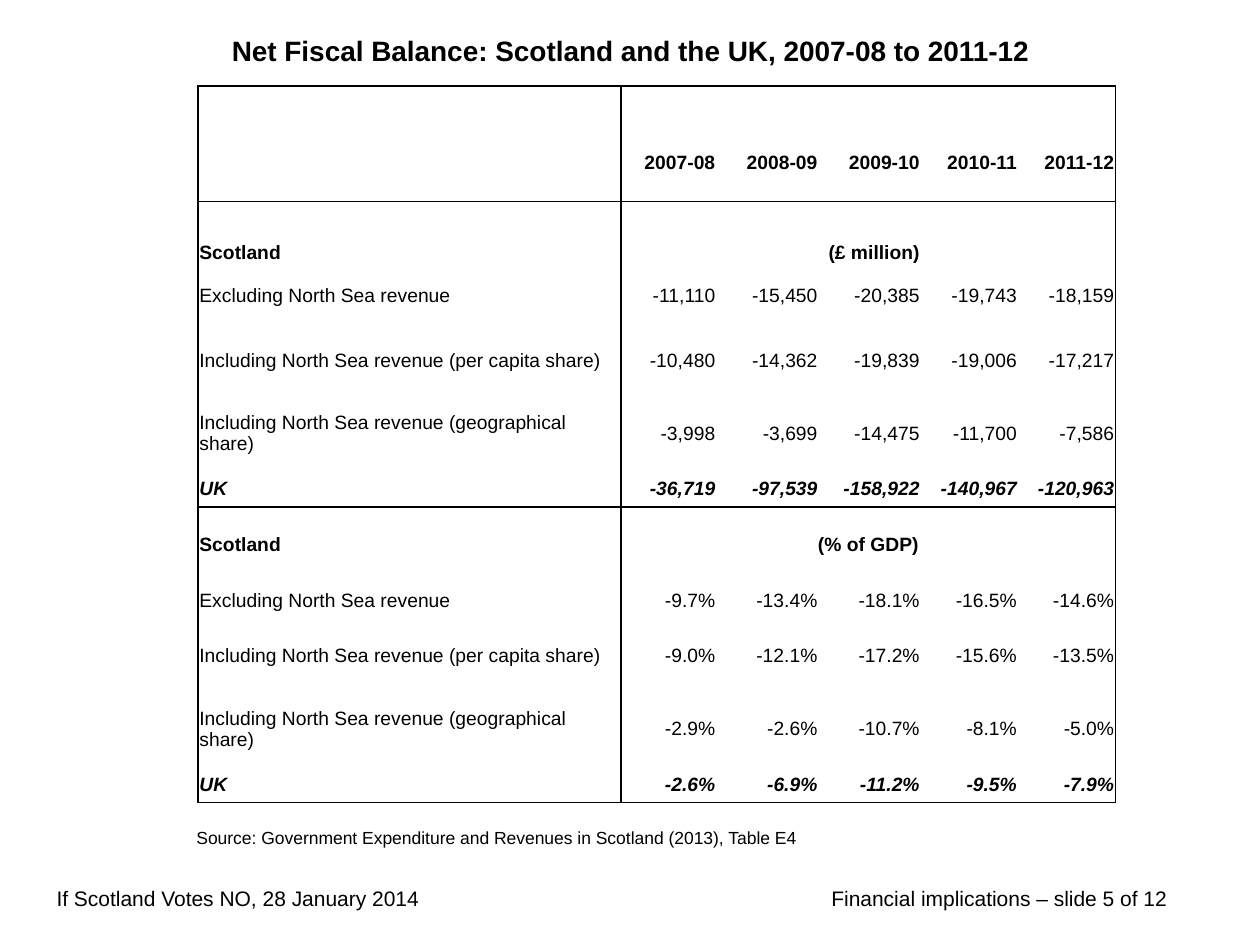
from dataclasses import dataclass

from lxml.etree import SubElement
from pptx import Presentation
from pptx.dml.color import RGBColor
from pptx.enum.text import MSO_ANCHOR, PP_ALIGN
from pptx.oxml.ns import qn
from pptx.util import Cm, Pt


@dataclass(frozen=True)
class Theme:
    font: str = "Arial"
    ink: str = "000000"
    title: int = 16
    footer: int = 12
    table: int = 11
    source: int = 10
    border: int = 1
    cell_inset: float = 0.03


class FiscalPage:
    def __init__(self, deck, theme):
        self.theme = theme
        self.page = deck.slides.add_slide(deck.slide_layouts[6])

    def style(self, para, size, bold=False, italic=False, align=PP_ALIGN.LEFT):
        para.alignment = align
        font = para.font
        font.name, font.size = self.theme.font, Pt(size)
        font.bold, font.italic = bold, italic
        font.color.rgb = RGBColor.from_string(self.theme.ink)

    def text(self, words, left, top, width, height, size, **look):
        box = self.page.shapes.add_textbox(Cm(left), Cm(top), Cm(width), Cm(height))
        box.text_frame.word_wrap = True
        para = box.text_frame.paragraphs[0]
        para.text = words
        self.style(para, size, **look)
        return box.text_frame

    def table(self, left, top, widths, heights):
        frame = self.page.shapes.add_table(
            len(heights), len(widths), Cm(left), Cm(top), Cm(sum(widths)), Cm(sum(heights)))
        table = frame.table
        table.first_row = table.horz_banding = False
        for column, width in zip(table.columns, widths):
            column.width = Cm(width)
        for row, height in zip(table.rows, heights):
            row.height = Cm(height)
        return table

    def cell(self, cell, words="", **look):
        inset = Cm(self.theme.cell_inset)
        cell.margin_left = cell.margin_right = cell.margin_top = inset
        cell.margin_bottom = 0
        cell.vertical_anchor = MSO_ANCHOR.MIDDLE
        para = cell.text_frame.paragraphs[0]
        para.text = words
        self.style(para, self.theme.table, **look)

    def heading_above(self, cell, heading):
        value = cell.text_frame.paragraphs[0]
        words, align = value.text, value.alignment
        value.text = heading
        self.style(value, self.theme.table, bold=True, align=align)
        para = cell.text_frame.add_paragraph()
        para.text = words
        para.space_before = Pt(12.5)
        self.style(para, self.theme.table, align=align)

    def rules(self, table, row_edges, column_edges):
        for row in range(len(table.rows)):
            for column in range(len(table.columns)):
                cell = table.cell(row, column)
                bottom = row + cell.span_height if cell.is_merge_origin else row + 1
                right = column + cell.span_width if cell.is_merge_origin else column + 1
                edges = {
                    "a:lnL": column in column_edges,
                    "a:lnR": right in column_edges,
                    "a:lnT": row in row_edges,
                    "a:lnB": bottom in row_edges,
                }
                properties = cell._tc.get_or_add_tcPr()
                for tag, visible in edges.items():
                    self.edge(properties, tag, visible)
                cell.fill.background()

    def edge(self, properties, tag, visible):
        line = SubElement(properties, qn(tag), w=str(Pt(self.theme.border)))
        if visible:
            fill = SubElement(line, qn("a:solidFill"))
            SubElement(fill, qn("a:srgbClr"), val=self.theme.ink)
        else:
            SubElement(line, qn("a:noFill"))


YEARS = ["2007-08", "2008-09", "2009-10", "2010-11", "2011-12"]
LABELS = [
    "Excluding North Sea revenue",
    "Including North Sea revenue (per capita share)",
    "Including North Sea revenue (geographical share)",
    "UK",
]
MILLIONS = [
    ["-11,110", "-15,450", "-20,385", "-19,743", "-18,159"],
    ["-10,480", "-14,362", "-19,839", "-19,006", "-17,217"],
    ["-3,998", "-3,699", "-14,475", "-11,700", "-7,586"],
    ["-36,719", "-97,539", "-158,922", "-140,967", "-120,963"],
]
PERCENTAGES = [
    ["-9.7%", "-13.4%", "-18.1%", "-16.5%", "-14.6%"],
    ["-9.0%", "-12.1%", "-17.2%", "-15.6%", "-13.5%"],
    ["-2.9%", "-2.6%", "-10.7%", "-8.1%", "-5.0%"],
    ["-2.6%", "-6.9%", "-11.2%", "-9.5%", "-7.9%"],
]
COLUMN_WIDTHS = [8.53, 1.93, 2.06, 2.06, 1.96, 1.96]
ROW_HEIGHTS = [0.76, 1.57, 2.46, 1.47, 1.47, 0.76, 1.5, 0.76, 1.47, 1.47, 0.76]
HEADER_ROW, MILLIONS_ROW, UNIT_ROW, PERCENTAGES_ROW = 1, 2, 6, 7


def add_balance_table(page):
    table = page.table(3.99, 1.73, COLUMN_WIDTHS, ROW_HEIGHTS)
    for row in range(len(ROW_HEIGHTS)):
        for column in range(len(COLUMN_WIDTHS)):
            page.cell(table.cell(row, column))
    table.cell(0, 0).merge(table.cell(HEADER_ROW, 0))
    for row in (0, UNIT_ROW):
        table.cell(row, 1).merge(table.cell(row, len(YEARS)))

    for column, year in enumerate(YEARS, 1):
        page.cell(table.cell(HEADER_ROW, column), year, bold=True, align=PP_ALIGN.RIGHT)
    for first_row, block in ((MILLIONS_ROW, MILLIONS), (PERCENTAGES_ROW, PERCENTAGES)):
        for row, (label, values) in enumerate(zip(LABELS, block), first_row):
            total = label == "UK"
            page.cell(table.cell(row, 0), label, bold=total, italic=total)
            for column, value in enumerate(values, 1):
                page.cell(table.cell(row, column), value,
                          bold=total, italic=total, align=PP_ALIGN.RIGHT)

    for cell in table.rows[MILLIONS_ROW].cells:
        cell.vertical_anchor = MSO_ANCHOR.BOTTOM
        cell.margin_bottom = Cm(0.34)
    page.heading_above(table.cell(MILLIONS_ROW, 0), "Scotland")
    page.heading_above(table.cell(MILLIONS_ROW, 3), "(£ million)")
    page.cell(table.cell(UNIT_ROW, 0), "Scotland", bold=True)
    page.cell(table.cell(UNIT_ROW, 1), "(% of GDP)", bold=True, align=PP_ALIGN.CENTER)
    page.rules(table, row_edges={0, 2, 6, 11}, column_edges={0, 1, 6})


def main():
    deck = Presentation()
    deck.slide_width, deck.slide_height = Cm(25.4), Cm(19.05)
    theme = Theme()
    page = FiscalPage(deck, theme)
    page.text("Financial implications – slide 5 of 12", 16.51, 17.73, 7.82, 0.76, theme.footer)
    page.text("If Scotland Votes NO, 28 January 2014", 0.89, 17.73, 8.92, 1.32, theme.footer)
    title = page.text("Net Fiscal Balance: Scotland and the UK, 2007-08 to 2011-12",
                      3.71, 0.33, 18.01, 2.01, theme.title, bold=True, align=PP_ALIGN.CENTER)
    title.vertical_anchor = MSO_ANCHOR.MIDDLE
    title.margin_bottom = Cm(0.76)
    page.text("Source: Government Expenditure and Revenues in Scotland (2013), Table E4",
              3.71, 16.54, 16.66, 0.69, theme.source)
    add_balance_table(page)
    deck.save("out.pptx")


if __name__ == "__main__":
    main()
